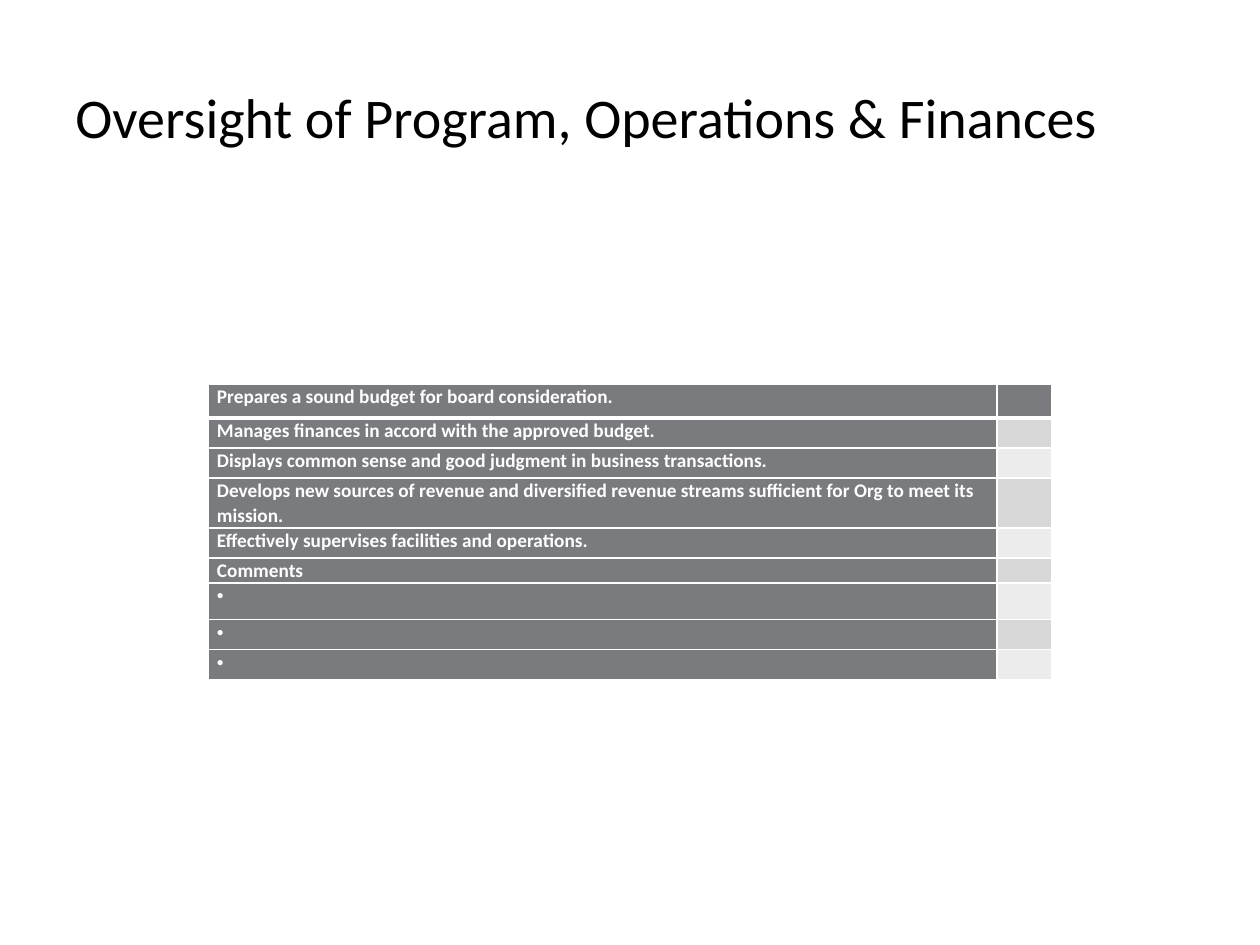
from lxml import etree
from pptx import Presentation
from pptx import util as u
from pptx.dml.color import RGBColor
from pptx.enum import text
from pptx.oxml import ns

PX = u.Inches(1) // 126
WHITE, BLACK, GRAY, DARK_BAND, LIGHT_BAND = "FFFFFF", "000000", "797B7E", "D7D7D8", "ECECEC"
CRITERIA = [
    "Prepares a sound budget for board consideration.",
    "Manages finances in accord with the approved budget.",
    "Displays common sense and good judgment in business transactions.",
    "Develops new sources of revenue and diversified revenue streams sufficient for Org to meet its mission.",
    "Effectively supervises facilities and operations.",
    "Comments",
]
COMMENT_LINES = 3
COLUMN_WIDTHS = [789, 55]
ROW_HEIGHTS = [34, 30, 30, 50, 30, 25, 37, 30, 30]


def color(value):
    return RGBColor.from_string(value)


def assign(target, values):
    for name, value in values.items():
        setattr(target, name, value)


def add_element(parent, tag, **attributes):
    return etree.SubElement(parent, ns.qn(tag), attributes)


class SlideBuilder:
    """Holds the style and the current slide, and draws its elements."""

    title_font = {"name": "Calibri", "size": u.Pt(32), "bold": False}
    table_font = {"name": "Calibri", "size": u.Pt(11), "bold": True}
    cell_format = {
        "margin_left": 9 * PX, "margin_right": 9 * PX,
        "margin_top": 0, "margin_bottom": 0,
        "vertical_anchor": text.MSO_ANCHOR.TOP,
    }

    def __init__(self, presentation):
        self.slide = presentation.slides.add_slide(presentation.slide_layouts[6])

    def add_title(self, words, left, top, width, height):
        shape = self.slide.shapes.add_textbox(left * PX, top * PX, width * PX, height * PX)
        assign(shape.text_frame, {"word_wrap": True, "vertical_anchor": text.MSO_ANCHOR.MIDDLE})
        shape.text_frame.text = words
        font = shape.text_frame.paragraphs[0].runs[0].font
        assign(font, self.title_font)
        font.color.rgb = color(BLACK)

    def add_table(self, left, top, labels, bullet_count):
        rows = labels + [" "] * bullet_count
        frame = self.slide.shapes.add_table(
            len(rows), len(COLUMN_WIDTHS), left * PX, top * PX,
            sum(COLUMN_WIDTHS) * PX, sum(ROW_HEIGHTS) * PX)
        table = frame.table
        for column, width in zip(table.columns, COLUMN_WIDTHS):
            column.width = width * PX
        for row, height in zip(table.rows, ROW_HEIGHTS):
            row.height = height * PX
        for index, label in enumerate(rows):
            band = GRAY if index == 0 else DARK_BAND if index % 2 else LIGHT_BAND
            self.fill_cell(table.cell(index, 0), label, GRAY, index, index >= len(labels))
            self.fill_cell(table.cell(index, 1), "", band, index)

    def fill_cell(self, cell, words, fill, row, bullet=False):
        assign(cell, self.cell_format)
        self.add_borders(cell, top=3 if row == 1 else 1, bottom=3 if row == 0 else 1)
        cell.fill.solid()
        cell.fill.fore_color.rgb = color(fill)
        paragraph = cell.text_frame.paragraphs[0]
        paragraph.line_spacing = 1.05
        if bullet:
            properties = paragraph._p.get_or_add_pPr()
            add_element(properties, "a:buFont", typeface="Arial")
            add_element(properties, "a:buChar", char="•")
        if words:
            paragraph.text = words
        for item in [paragraph, *paragraph.runs]:
            assign(item.font, self.table_font)
            item.font.color.rgb = color(WHITE)
        if not words:
            add_element(paragraph._p, "a:endParaRPr", sz="1100")

    def add_borders(self, cell, top, bottom):
        properties = cell._tc.get_or_add_tcPr()
        for side, width in {"L": 1, "R": 1, "T": top, "B": bottom}.items():
            line = add_element(properties, f"a:ln{side}", w=str(u.Pt(width)))
            add_element(add_element(line, "a:solidFill"), "a:srgbClr", val=WHITE)


def main():
    presentation = Presentation()
    assign(presentation, {"slide_width": 1260 * PX, "slide_height": 945 * PX})
    builder = SlideBuilder(presentation)
    builder.add_title("Oversight of Program, Operations & Finances", 63, 38, 1134, 157)
    builder.add_table(208, 384, CRITERIA, COMMENT_LINES)
    presentation.save("out.pptx")


if __name__ == "__main__":
    main()
